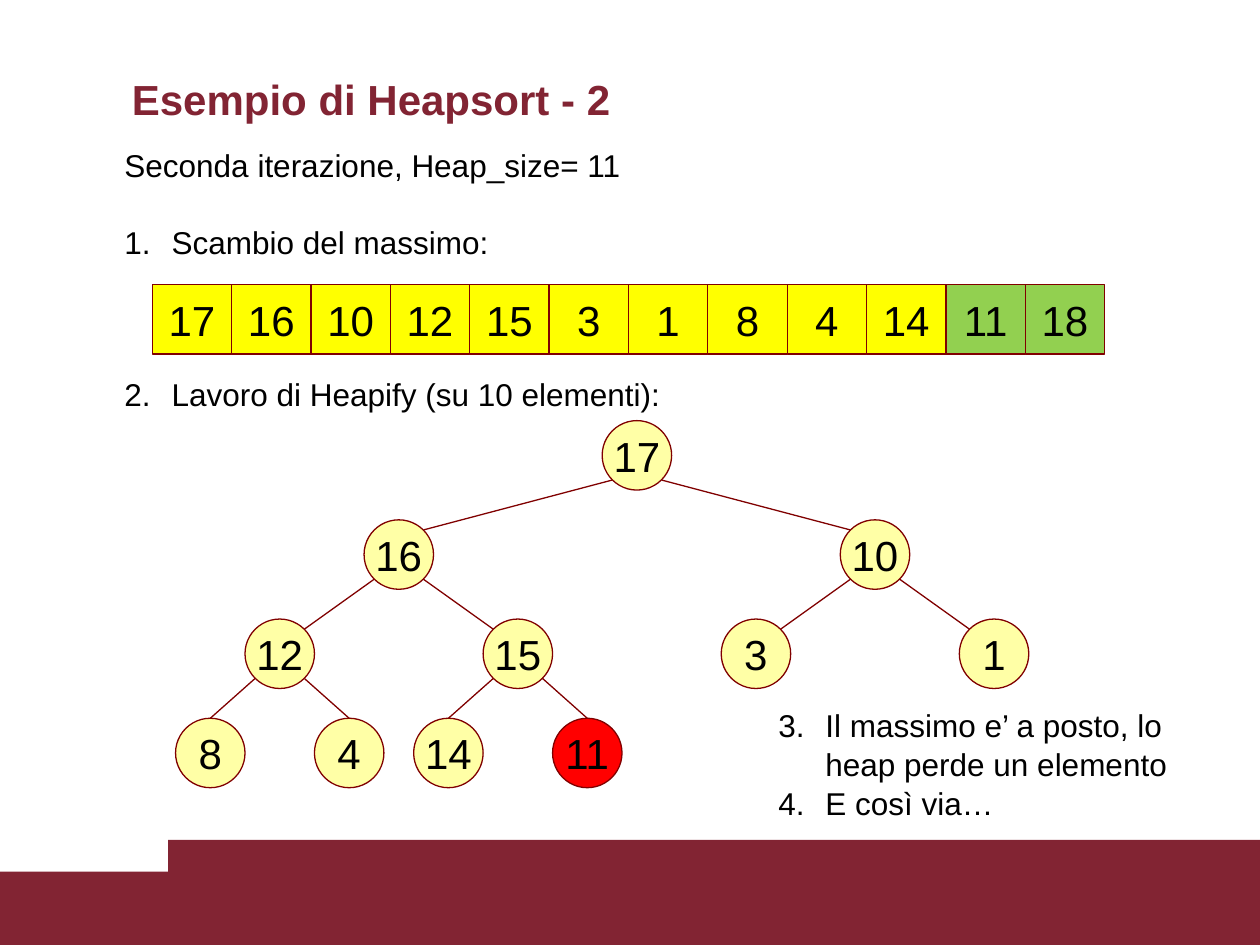
from lxml import etree
from pptx import Presentation
from pptx import util as u
from pptx.dml import color as dml
from pptx.enum import shapes, text
from pptx.oxml import ns

MAROON, BORDER, BLACK = "822433", "800000", "000000"
YELLOW, GREEN, RED = "FFFF00", "92D050", "FF0000"

TITLE = "Esempio di Heapsort - 2"
STEPS = [
    ("Seconda iterazione, Heap_size= 11", {}),
    ("Scambio del massimo:", {"number": 1, "before": 21.5}),
    ("Lavoro di Heapify (su 10 elementi):", {"number": 2, "before": 64.5}),
]
FINAL_STEPS = [
    ("Il massimo e’ a posto, lo heap perde un elemento", {"number": 3}),
    ("E così via…", {"number": 3}),
]
HEAP = [17, 16, 10, 12, 15, 3, 1, 8, 4, 14, 11]
ARRAY = HEAP + [18]
ACTIVE = 10
BANDS = [(0, 17.57), (3.39, 16.93)]

WIDTH, HEIGHT = 25.4, 19.05
CELL_LEFT, CELL_TOP, CELL_WIDTH = 3.07, 5.74, 1.6
NODE = 1.4
DIAGONAL = NODE / 2 * 0.71
TREE_TOP, LEVEL_STEP = 9.18, 2
ROOT_X = 12.84
CHILD_OFFSETS = [9.6 / 2, 4.8 / 2, 1.4]

presentation = Presentation()
presentation.slide_width, presentation.slide_height = u.Cm(WIDTH), u.Cm(HEIGHT)
slide = presentation.slides.add_slide(presentation.slide_layouts[6])


def rgb(value):
    return dml.RGBColor.from_string(value)


def write(frame, content, size=18, color=BLACK, bold=False, align=text.PP_ALIGN.LEFT,
          number=None, before=0, spacing=1.0):
    first = frame.paragraphs[0]
    paragraph = frame.add_paragraph() if first.runs else first
    paragraph.alignment = align
    paragraph.line_spacing = spacing
    paragraph.space_before = u.Pt(before)
    if number:
        properties = paragraph._p.get_or_add_pPr()
        properties.set("marL", str(u.Cm(0.95)))
        properties.set("indent", str(-u.Cm(0.95)))
        etree.SubElement(properties, ns.qn("a:buAutoNum"),
                         type="arabicPeriod", startAt=str(number))
    run = paragraph.add_run()
    run.text = content
    run.font.name = "Arial"
    run.font.size = u.Pt(size)
    run.font.bold = bold
    run.font.color.rgb = rgb(color)


def add_box(left, top, width, height):
    frame = slide.shapes.add_textbox(*map(u.Cm, (left, top, width, height))).text_frame
    frame.word_wrap = True
    return frame


def add_block(kind, left, top, width, height, fill, line=None, alpha=None, label=None):
    shape = slide.shapes.add_shape(kind, *map(u.Cm, (left, top, width, height)))
    shape.shadow.inherit = False
    shape.fill.solid()
    shape.fill.fore_color.rgb = rgb(fill)
    if alpha:
        fill_color = shape._element.spPr.find(ns.qn("a:solidFill"))[0]
        etree.SubElement(fill_color, ns.qn("a:alpha"), val=str(alpha * 1000))
    if line:
        shape.line.color.rgb = rgb(line)
        shape.line.width = u.Pt(0.75)
    else:
        shape.line.fill.background()
    if label is not None:
        frame = shape.text_frame
        frame.margin_left = frame.margin_right = frame.margin_top = frame.margin_bottom = 0
        frame.vertical_anchor = text.MSO_ANCHOR.MIDDLE
        frame.word_wrap = False
        write(frame, str(label), size=24, align=text.PP_ALIGN.CENTER)
    return shape


def add_edge(start, end):
    edge = slide.shapes.add_connector(shapes.MSO_CONNECTOR.STRAIGHT,
                                      *map(u.Cm, (*start, *end)))
    edge.line.color.rgb = rgb(BORDER)
    edge.line.width = u.Pt(0.75)
    etree.SubElement(edge._element.spPr, ns.qn("a:effectLst"))
    return edge


for left, top in BANDS:
    add_block(shapes.MSO_SHAPE.RECTANGLE, left, top, WIDTH - left, HEIGHT - top, MAROON)

title = add_box(2.41, 1.3, 21, 1.4)
title.vertical_anchor = text.MSO_ANCHOR.MIDDLE
write(title, TITLE, size=24, color=MAROON, bold=True)

for box, lines in [((2.26, 2.79, 11.4, 6.25), STEPS), ((15.44, 14.07, 8.84, 2.57), FINAL_STEPS)]:
    frame = add_box(*box)
    for content, options in lines:
        write(frame, content, spacing=1.04, **options)

for index, value in enumerate(ARRAY):
    add_block(shapes.MSO_SHAPE.RECTANGLE, CELL_LEFT + index * CELL_WIDTH, CELL_TOP,
              CELL_WIDTH, NODE, YELLOW if index < ACTIVE else GREEN, BORDER, label=value)

centers = []
for index, value in enumerate(HEAP):
    level = (index + 1).bit_length() - 1
    y = TREE_TOP + level * LEVEL_STEP
    x = ROOT_X
    if index:
        parent_x, parent_y = centers[(index - 1) // 2]
        side = -1 if index % 2 else 1
        x = parent_x + side * CHILD_OFFSETS[level - 1]
    centers.append((x, y))
    active = index < ACTIVE
    node = add_block(shapes.MSO_SHAPE.OVAL, x - NODE / 2, y - NODE / 2, NODE, NODE,
                     YELLOW if active else RED, BORDER, 35 if active else None, value)
    if index:
        edge = add_edge((parent_x + side * DIAGONAL, parent_y + DIAGONAL),
                        (x - side * DIAGONAL, y - DIAGONAL))
        if level == len(CHILD_OFFSETS):
            edge.end_connect(node, 0)

presentation.save("out.pptx")
